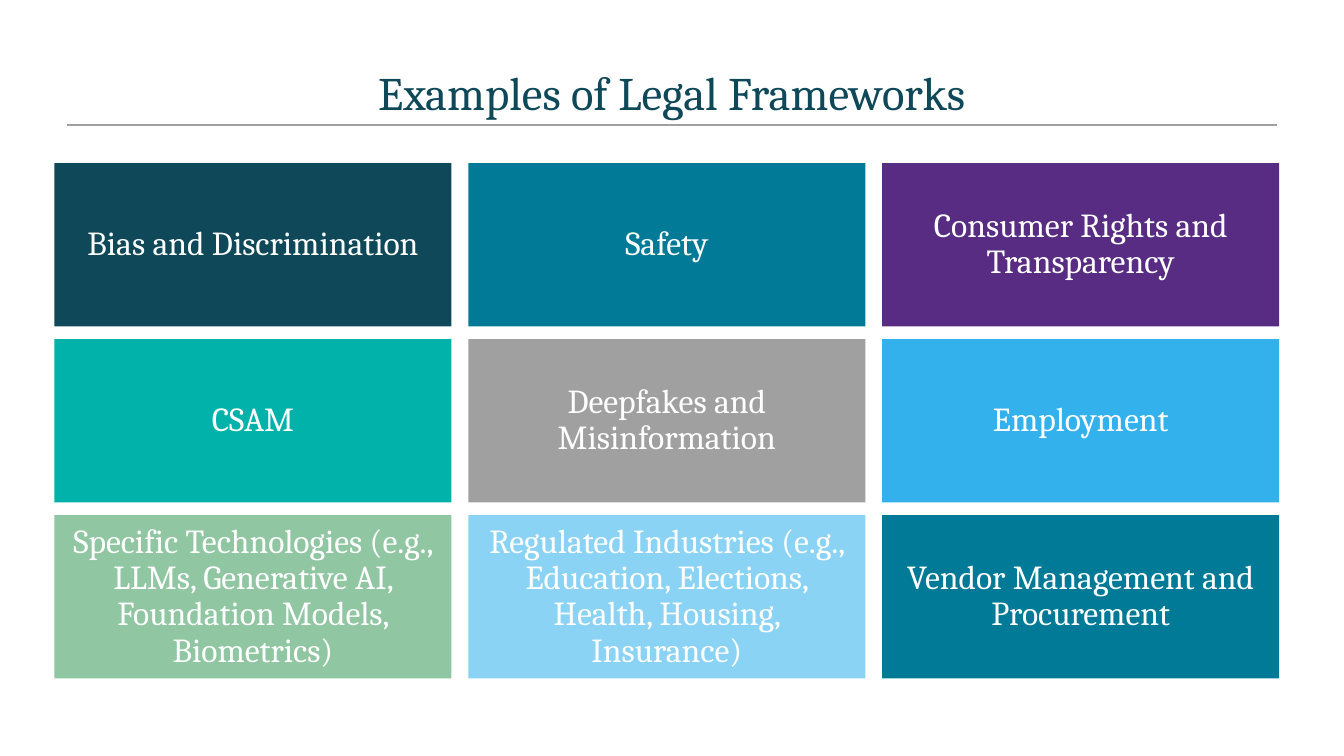
from pptx import Presentation
from pptx.dml.color import RGBColor
from pptx.enum.shapes import MSO_CONNECTOR, MSO_SHAPE
from pptx.enum.text import MSO_ANCHOR, PP_ALIGN
from pptx.oxml.ns import qn
from pptx.util import Pt
from lxml import etree

RECTANGLE = MSO_SHAPE.RECTANGLE
STRAIGHT = MSO_CONNECTOR.STRAIGHT
MIDDLE = MSO_ANCHOR.MIDDLE
CENTER = PP_ALIGN.CENTER

TITLE = "Examples of Legal Frameworks"
FRAMEWORKS = [
    ("Bias and Discrimination", "navy"),
    ("Safety", "teal"),
    ("Consumer Rights and Transparency", "purple"),
    ("CSAM", "turquoise"),
    ("Deepfakes and Misinformation", "gray"),
    ("Employment", "blue"),
    ("Specific Technologies (e.g., LLMs, Generative AI, Foundation Models, Biometrics)", "green"),
    ("Regulated Industries (e.g., Education, Elections, Health, Housing, Insurance)", "sky"),
    ("Vendor Management and Procurement", "teal"),
]
COLORS = {
    "navy": "0F4859",
    "teal": "007A96",
    "purple": "582C83",
    "turquoise": "00B2A9",
    "gray": "A0A0A0",
    "blue": "33B1ED",
    "green": "90C6A2",
    "sky": "8BD3F5",
    "white": "FFFFFF",
}
FONT = "Cambria"
SLIDE_WIDTH, SLIDE_HEIGHT = 960, 540
MARGIN = 48
RULE_TOP = 89.3
COLUMNS = 3
GRID_LEFT, GRID_TOP = 38.9, 116.6
TILE_WIDTH, TILE_HEIGHT = 283.6, 116.6
COLUMN_GAP, ROW_GAP = 12, 9.1


def color(name):
    return RGBColor.from_string(COLORS[name])


def write(shape, text, size, color_name, spacing):
    frame = shape.text_frame
    paragraph = frame.paragraphs[0]
    paragraph.text = text
    formats = {
        frame: {"word_wrap": True, "vertical_anchor": MIDDLE},
        paragraph: {"alignment": CENTER, "line_spacing": spacing},
        paragraph.font: {"name": FONT, "size": Pt(size)},
        paragraph.font.color: {"rgb": color(color_name)},
    }
    for target, values in formats.items():
        for attribute, value in values.items():
            setattr(target, attribute, value)


def add_heading(slide):
    right = SLIDE_WIDTH - MARGIN
    rule = slide.shapes.add_connector(
        STRAIGHT, Pt(MARGIN), Pt(RULE_TOP), Pt(right), Pt(RULE_TOP))
    rule.line.color.rgb = color("gray")
    rule.line.width = Pt(1)
    etree.SubElement(rule._element.spPr, qn("a:effectLst"))
    heading = slide.shapes.add_textbox(
        Pt(MARGIN), Pt(41.8), Pt(right - MARGIN), Pt(48.2))
    write(heading, TITLE, 33.3, "navy", 1.0)


def add_tiles(slide):
    for index, (framework, fill_name) in enumerate(FRAMEWORKS):
        row, column = divmod(index, COLUMNS)
        left = GRID_LEFT + column * (TILE_WIDTH + COLUMN_GAP)
        top = GRID_TOP + row * (TILE_HEIGHT + ROW_GAP)
        tile = slide.shapes.add_shape(
            RECTANGLE, Pt(left), Pt(top), Pt(TILE_WIDTH), Pt(TILE_HEIGHT))
        tile.shadow.inherit = False
        tile.fill.solid()
        tile.fill.fore_color.rgb = color(fill_name)
        tile.line.fill.background()
        write(tile, framework, 24, "white", 0.9)


def main():
    presentation = Presentation()
    presentation.slide_width = Pt(SLIDE_WIDTH)
    presentation.slide_height = Pt(SLIDE_HEIGHT)
    slide = presentation.slides.add_slide(presentation.slide_layouts[6])
    add_heading(slide)
    add_tiles(slide)
    presentation.save("out.pptx")


if __name__ == "__main__":
    main()
